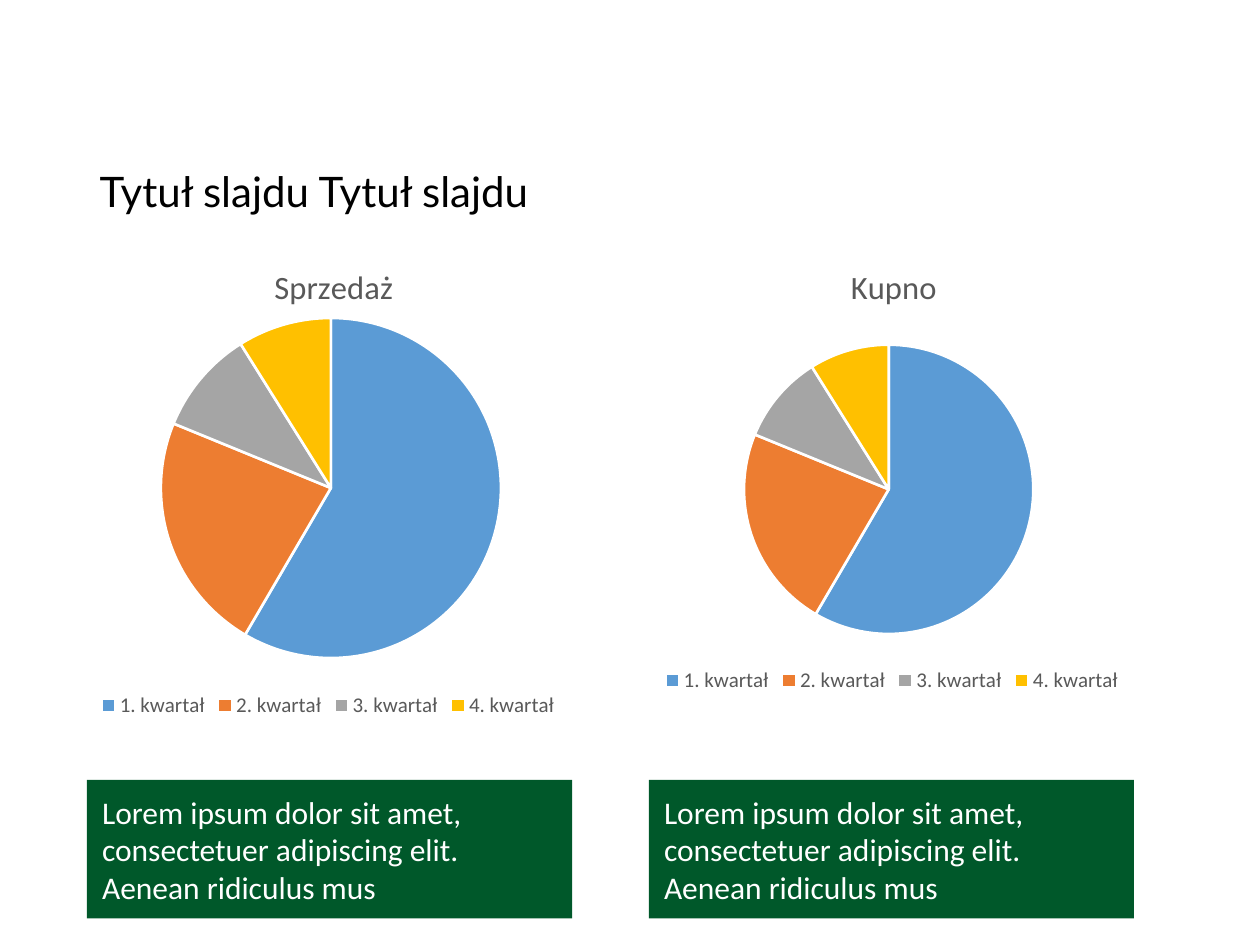
import dataclasses

import pptx
import pptx.chart.data
import pptx.dml.color
import pptx.enum.chart
import pptx.enum.shapes
import pptx.enum.text
import pptx.oxml
import pptx.oxml.ns
import pptx.util

Inches, Pt = pptx.util.Inches, pptx.util.Pt


@dataclasses.dataclass(frozen=True)
class Theme:
    heading_font: str = "Lato"
    body_font: str = "Calibri"
    heading_size: float = 24
    caption_size: float = 18
    chart_title_size: float = 18.6
    legend_size: float = 12
    black: str = "000000"
    white: str = "FFFFFF"
    grey: str = "595959"
    green: str = "00582A"
    slices: tuple = ("5B9BD5", "ED7D31", "A5A5A5", "FFC000")


THEME = Theme()
MARGIN, COLUMN_STEP, COLUMN_WIDTH = 0.69, 4.46, 3.85
CAPTION_TOP, CAPTION_HEIGHT = 6.19, 1.1
QUARTERS = [f"{number}. kwartał" for number in range(1, 5)]
SHARES = (59, 23, 10, 9)
CAPTION = ("Lorem ipsum dolor sit amet, consectetuer adipiscing elit. "
           "Aenean ridiculus mus")


def rgb(colour):
    return pptx.dml.color.RGBColor.from_string(colour)


def style(font, name, size, colour):
    font.name, font.size, font.bold = name, Pt(size), False
    font.color.rgb = rgb(colour)


def manual_layout(target=None, **shares):
    """Layout element in shares of the chart's size."""
    modes = f'<c:layoutTarget val="{target}"/>' if target else ""
    modes += '<c:xMode val="edge"/><c:yMode val="edge"/>'
    sizes = "".join(f'<c:{key} val="{share:.2f}"/>' for key, share in shares.items())
    return pptx.oxml.parse_xml(
        f'<c:layout {pptx.oxml.ns.nsdecls("c")}><c:manualLayout>'
        f"{modes}{sizes}</c:manualLayout></c:layout>")


def place(parent, layout, index):
    for automatic in parent.findall(pptx.oxml.ns.qn("c:layout")):
        parent.remove(automatic)
    parent.insert(index, layout)


def add_heading(slide, text):
    heading = slide.shapes.title
    heading.left, heading.top = Inches(MARGIN), Inches(1.23)
    heading.width, heading.height = Inches(10 - 2 * MARGIN), Inches(0.62)
    heading.text_frame.text = text
    heading.text_frame.vertical_anchor = pptx.enum.text.MSO_ANCHOR.MIDDLE
    line = heading.text_frame.paragraphs[0]
    line.alignment = pptx.enum.text.PP_ALIGN.LEFT
    line.line_spacing = 0.9
    style(line.font, THEME.heading_font, THEME.heading_size, THEME.black)


def add_pie(slide, title, frame, title_spot, centre, radius):
    """Pie chart; title spot, centre and radius are in slide inches."""
    left, top, width, height = frame
    data = pptx.chart.data.CategoryChartData()
    data.categories = QUARTERS
    data.add_series(title, SHARES)
    chart = slide.shapes.add_chart(
        pptx.enum.chart.XL_CHART_TYPE.PIE, *map(Inches, frame), data).chart
    style(chart.font, THEME.body_font, 10, THEME.black)

    # Title
    chart.has_title = True
    chart.chart_title.text_frame.text = title
    style(chart.chart_title.text_frame.paragraphs[0].font,
          THEME.body_font, THEME.chart_title_size, THEME.grey)
    chart.chart_title.include_in_layout = False
    place(chart.chart_title._element,
          manual_layout(x=(title_spot[0] - left) / width,
                        y=(title_spot[1] - top) / height), 1)

    # Legend
    chart.has_legend = True
    chart.legend.position = pptx.enum.chart.XL_LEGEND_POSITION.BOTTOM
    chart.legend.include_in_layout = False
    style(chart.legend.font, THEME.body_font, THEME.legend_size, THEME.grey)

    # Slices
    pie = chart.plots[0]
    pie.vary_by_categories = True
    for index, colour in enumerate(THEME.slices):
        piece = pie.series[0].points[index].format
        piece.fill.solid()
        piece.fill.fore_color.rgb = rgb(colour)
        piece.line.color.rgb = rgb(THEME.white)
        piece.line.width = Pt(1.5)
    plot_area = chart._chartSpace.chart.plotArea
    place(plot_area,
          manual_layout("inner",
                        x=(centre[0] - radius - left) / width,
                        y=(centre[1] - radius - top) / height,
                        w=2 * radius / width, h=2 * radius / height), 0)


def add_caption(slide, column):
    caption = slide.shapes.add_shape(
        pptx.enum.shapes.MSO_SHAPE.RECTANGLE,
        Inches(MARGIN + column * COLUMN_STEP), Inches(CAPTION_TOP),
        Inches(COLUMN_WIDTH), Inches(CAPTION_HEIGHT))
    caption.shadow.inherit = False
    caption.fill.solid()
    caption.fill.fore_color.rgb = rgb(THEME.green)
    caption.line.fill.background()
    frame = caption.text_frame
    frame.text = CAPTION
    frame.word_wrap = True
    frame.vertical_anchor = pptx.enum.text.MSO_ANCHOR.MIDDLE
    frame.margin_left = frame.margin_right = Inches(0.12)
    frame.paragraphs[0].alignment = pptx.enum.text.PP_ALIGN.LEFT
    style(frame.paragraphs[0].font, THEME.body_font, THEME.caption_size, THEME.white)


def main():
    deck = pptx.Presentation()
    deck.slide_width, deck.slide_height = Inches(10), Inches(7.5)
    slide = deck.slides.add_slide(deck.slide_layouts[5])

    # Sales and purchases by quarter
    add_pie(slide, "Sprzedaż", (0.45, 1.77, 4.31, 3.97),
            title_spot=(2.15, 2.05), centre=(2.61, 3.89), radius=1.35)
    add_pie(slide, "Kupno", (4.41, 1.98, 5.34, 3.56),
            title_spot=(6.71, 2.05), centre=(7.08, 3.88), radius=1.15)

    add_heading(slide, "Tytuł slajdu Tytuł slajdu")

    # One caption below each chart
    for column in range(2):
        add_caption(slide, column)

    deck.save("out.pptx")


if __name__ == "__main__":
    main()
